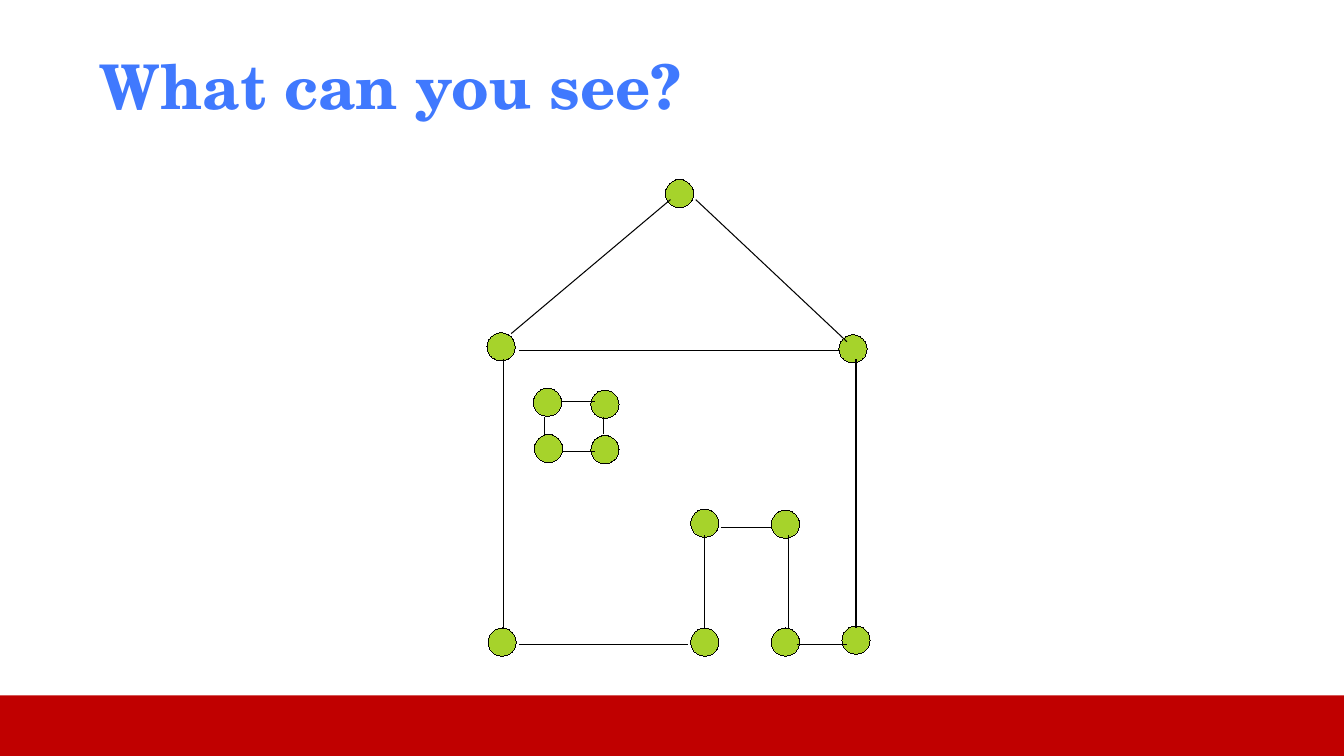
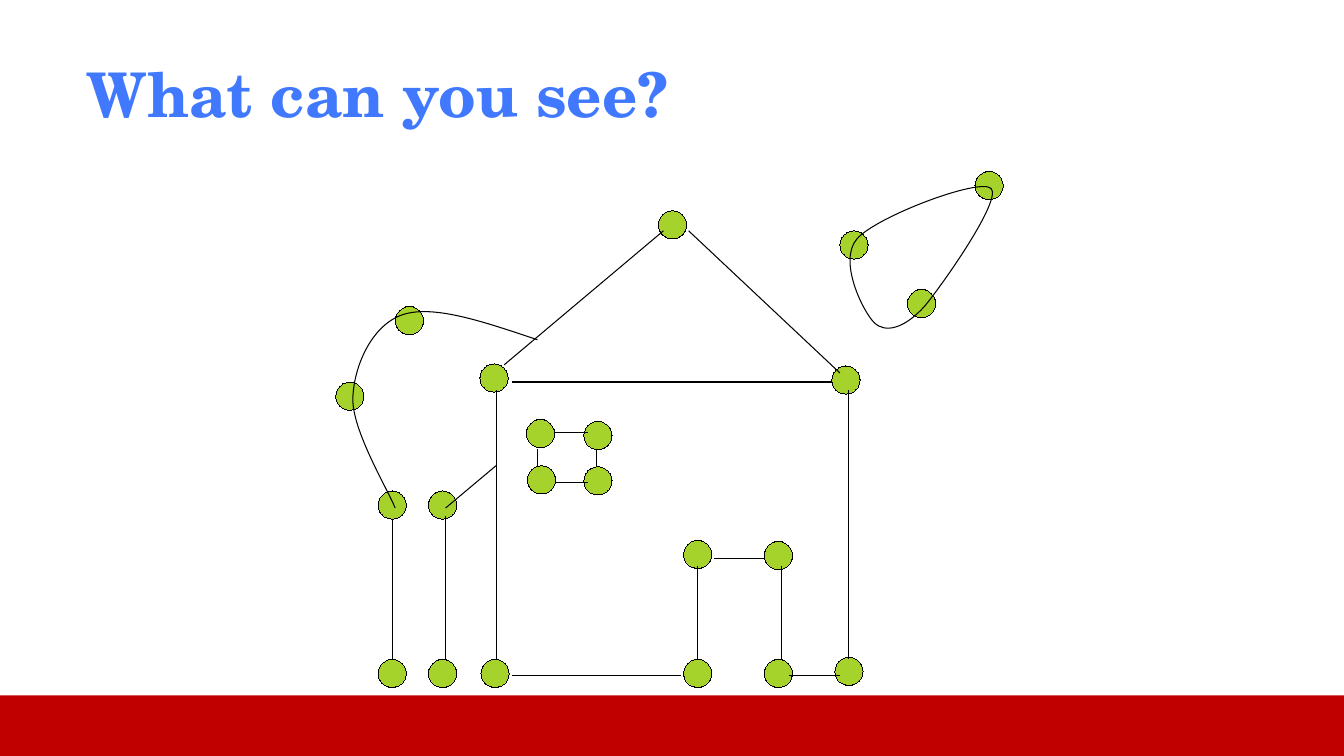
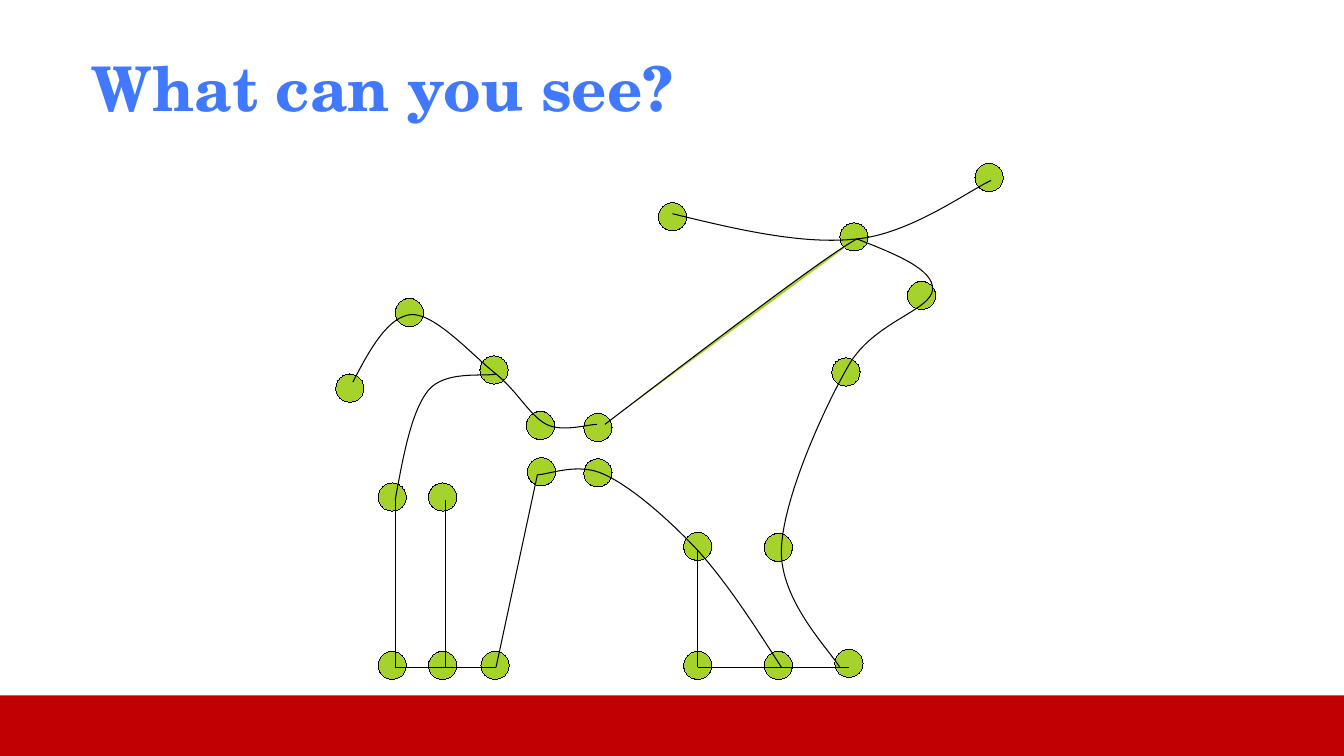
from lxml import etree
from pptx import Presentation
from pptx.enum import shapes, text
from pptx.dml.color import RGBColor
from pptx.oxml.ns import qn
from pptx.util import Pt

SCALE = 9144
WIDTH, HEIGHT = 1333, 750
DOT = 28
COLORS = {"band": "C00000", "dot": "A6D32B", "line": "000000", "title": "4079FE"}
FONT = "TeX Gyre Schola"
TITLE = "What can you see?"

HOUSE_DOTS = [
    (653, 209), (825, 363), (476, 361), (522, 416), (523, 462), (678, 536), (579, 463),
    (579, 418), (758, 537), (678, 654), (758, 654), (477, 654), (828, 652),
]
TAIL_DOTS = [(392, 304), (333, 379), (375, 487), (425, 487), (375, 654), (425, 654)]
HEAD_DOTS = [(833, 229), (900, 287), (967, 170)]
HOUSE_LINES = [
    (500, 362, 658, 229), (683, 229, 833, 370), (508, 379, 825, 379),
    (492, 387, 492, 654), (508, 670, 675, 670), (692, 654, 692, 562),
    (708, 554, 758, 554), (775, 562, 775, 654), (783, 670, 833, 670),
    (842, 654, 842, 387), (550, 429, 583, 429), (592, 445, 592, 462),
    (583, 479, 550, 479), (533, 462, 533, 445),
]
TAIL_LINES = [(389, 515, 389, 654), (442, 654, 442, 512), (442, 504, 492, 462)]
ANIMAL_LINES = [
    (842, 662, 692, 662), (533, 471, 492, 662), (492, 662, 392, 662),
    (442, 662, 442, 496), (392, 662, 392, 496), (692, 662, 692, 546),
]
ANIMAL_CURVES = [
    [(667, 212), (732, 228, 797, 243, 850, 237), (903, 232, 961, 189, 983, 179)],
    [(350, 379), (367, 346, 385, 314, 408, 312), (432, 311, 469, 353, 492, 371),
     (514, 389, 525, 412, 542, 421), (558, 429, 583, 421, 592, 421)],
    [(850, 237), (888, 252, 926, 267, 925, 287), (924, 308, 867, 319, 842, 362),
     (817, 405, 776, 496, 775, 546), (774, 596, 822, 644, 833, 662)],
    [(775, 662), (748, 620, 721, 578, 692, 546), (662, 514, 626, 483, 600, 471),
     (574, 458, 544, 471, 533, 471)],
    [(392, 496), (400, 452, 408, 408, 425, 387), (442, 367, 481, 374, 492, 371)],
]


class Deck:
    """Holds the shared style and the slide being drawn."""

    def __init__(self):
        """Start an empty wide presentation."""
        self.prs = Presentation()
        self.prs.slide_width, self.prs.slide_height = WIDTH * SCALE, HEIGHT * SCALE
        self.s = None

    def color(self, name):
        """Return a named colour."""
        return RGBColor.from_string(COLORS[name])

    def slide(self, left, top, width):
        """Add a slide with its bottom band and title."""
        self.s = self.prs.slides.add_slide(self.prs.slide_layouts[5])
        band = self.shape(shapes.MSO_SHAPE.RECTANGLE, 0, 690, WIDTH, 60, "band")
        band.line.fill.background()
        sp = self.s.shapes.title
        sp.left, sp.top, sp.width, sp.height = (v * SCALE for v in (left, top, width, 125))
        tf = sp.text_frame
        tf.text = TITLE
        tf.word_wrap = True
        tf.auto_size = text.MSO_AUTO_SIZE.NONE
        tf.vertical_anchor = text.MSO_ANCHOR.MIDDLE
        p = tf.paragraphs[0]
        p.alignment = text.PP_ALIGN.LEFT
        p.font.name, p.font.size, p.font.bold = FONT, Pt(44), True
        p.font.color.rgb = self.color("title")

    def shape(self, kind, left, top, width, height, fill):
        """Add a filled preset shape."""
        sp = self.s.shapes.add_shape(kind, *(v * SCALE for v in (left, top, width, height)))
        sp.shadow.inherit = False
        sp.fill.solid()
        sp.fill.fore_color.rgb = self.color(fill)
        return sp

    def dots(self, points, dx=0, dy=0):
        """Add a hairline dot at each shifted top left corner."""
        for x, y in points:
            sp = self.shape(shapes.MSO_SHAPE.OVAL, x + dx, y + dy, DOT, DOT, "dot")
            sp.line.color.rgb = self.color("line")
            sp.element.spPr.find(qn("a:ln")).set("w", "0")

    def stroke(self, sp):
        """Give a line or curve the thin pen."""
        sp.line.color.rgb = self.color("line")
        sp.line.width = Pt(0.75)

    def lines(self, ends, dx=0, dy=0):
        """Add a straight connector for each shifted pair of ends."""
        for x1, y1, x2, y2 in ends:
            cxn = self.s.shapes.add_connector(
                shapes.MSO_CONNECTOR.STRAIGHT,
                *(v * SCALE for v in (x1 + dx, y1 + dy, x2 + dx, y2 + dy)))
            self.stroke(cxn)
            etree.SubElement(cxn.element.spPr, qn("a:effectLst"))

    def curve(self, start, *segments, fill=None, close=False):
        """Add a Bezier outline; a segment is two controls and an end."""
        ends = [seg[4:] for seg in segments]
        builder = self.s.shapes.build_freeform(*start, scale=SCALE)
        builder.add_line_segments(ends, close=close)
        sp = builder.convert_to_shape()
        left, top = (min(axis) for axis in zip(start, *ends))
        for node, seg in zip(sp.element.xpath(".//a:lnTo"), segments):
            node.tag = qn("a:cubicBezTo")
            for i, (x, y) in enumerate((seg[:2], seg[2:4])):
                pt = etree.Element(qn("a:pt"), x=str(x - left), y=str(y - top))
                node.insert(i, pt)
        sp.shadow.inherit = False
        if fill:
            sp.fill.solid()
            sp.fill.fore_color.rgb = self.color(fill)
        else:
            sp.fill.background()
        self.stroke(sp)


def main():
    """Draw the three dot puzzles."""
    deck = Deck()

    deck.slide(89, 22, 881)
    deck.dots(HOUSE_DOTS, 7, -31)
    deck.lines(HOUSE_LINES, 7, -31)

    deck.slide(76, 30, 781)
    deck.dots(HOUSE_DOTS)
    deck.lines(HOUSE_LINES)
    deck.dots(TAIL_DOTS + HEAD_DOTS)
    deck.lines(TAIL_LINES)
    deck.curve((533, 337), (482, 320, 431, 302, 400, 312),
               (369, 322, 351, 363, 350, 395), (349, 427, 385, 486, 392, 504))
    deck.curve((850, 237), (831, 259, 856, 309, 867, 320),
               (878, 331, 897, 326, 917, 304), (936, 281, 994, 198, 983, 187),
               (972, 176, 869, 215, 850, 237), close=True)

    deck.slide(81, 24, 781)
    deck.dots(HOUSE_DOTS + TAIL_DOTS + HEAD_DOTS, dy=-8)
    deck.curve((600, 421), (710, 337, 819, 254, 850, 237), fill="dot")
    for outline in ANIMAL_CURVES:
        deck.curve(*outline)
    deck.lines(ANIMAL_LINES)

    deck.prs.save("out.pptx")


if __name__ == "__main__":
    main()
